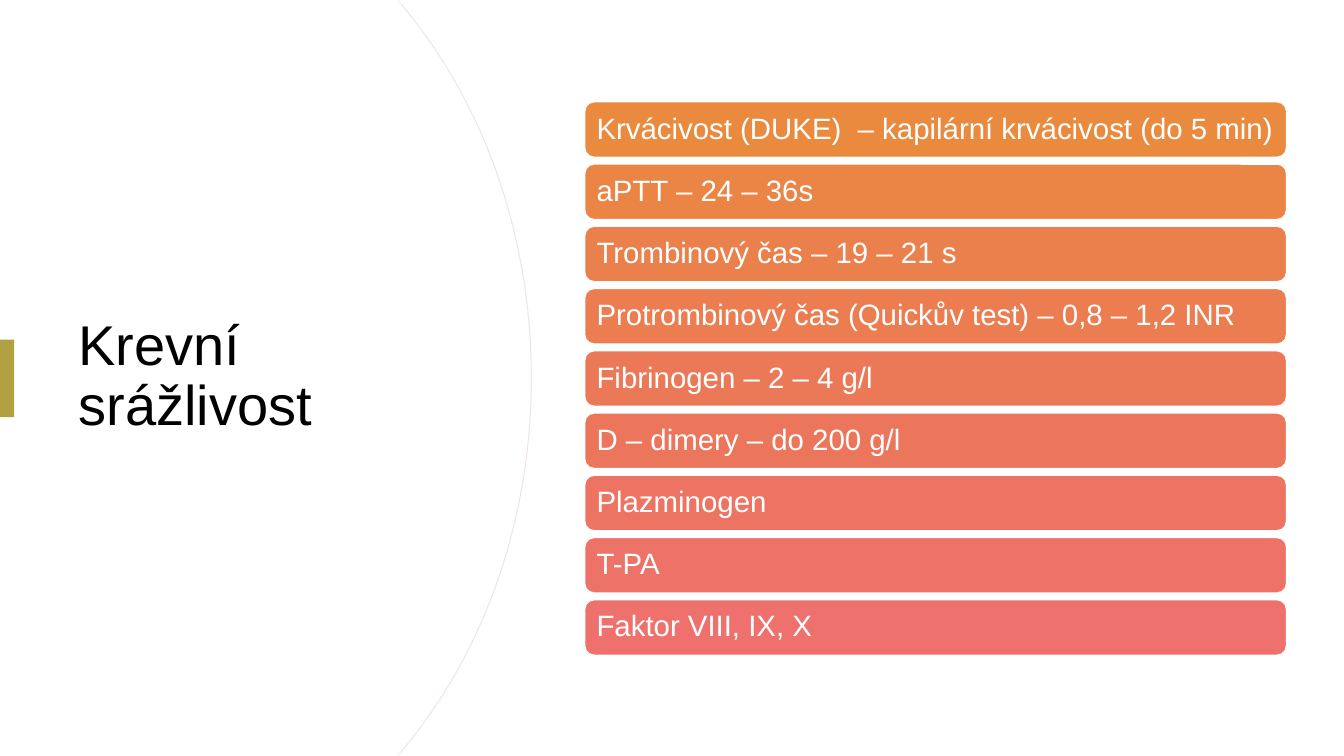
from lxml import etree
from pptx import Presentation
from pptx.dml.color import RGBColor
from pptx.enum.shapes import MSO_SHAPE
from pptx.enum.text import MSO_ANCHOR, PP_ALIGN
from pptx.oxml.ns import qn
from pptx.util import Inches, Pt

RECTANGLE, ROUNDED = MSO_SHAPE.RECTANGLE, MSO_SHAPE.ROUNDED_RECTANGLE
MIDDLE, LEFT = MSO_ANCHOR.MIDDLE, PP_ALIGN.LEFT

WIDTH, HEIGHT = 13.33, 7.5
COLORS = {"white": "FFFFFF", "black": "000000", "edge": "F0E5E5", "accent": "B1A141"}

# Each test with the colour of its bar
TESTS = [
    ("Krvácivost (DUKE)  – kapilární krvácivost (do 5 min)", "E98A3F"),
    ("aPTT – 24 – 36s", "EA8545"),
    ("Trombinový čas – 19 – 21 s", "EA804B"),
    ("Protrombinový čas (Quickův test) – 0,8 – 1,2 INR", "EB7D51"),
    ("Fibrinogen – 2 – 4 g/l", "EB7957"),
    ("D – dimery – do 200 g/l", "EC765C"),
    ("Plazminogen", "ED7462"),
    ("T-PA", "ED7268"),
    ("Faktor VIII, IX, X", "EE716E"),
]


def paint(shape, fill, line=None, weight=1):
    shape.shadow.inherit = False
    shape.fill.solid()
    shape.fill.fore_color.rgb = RGBColor.from_string(fill)
    if line:
        shape.line.color.rgb = RGBColor.from_string(line)
        shape.line.width = Pt(weight)
    else:
        shape.line.fill.background()


def write(box, text, size, color, margin):
    frame = box.text_frame
    layout = {"word_wrap": True, "vertical_anchor": MIDDLE,
              "margin_left": Inches(margin), "margin_right": Inches(margin),
              "margin_top": Inches(0.05), "margin_bottom": Inches(0.05)}
    for name, value in layout.items():
        setattr(frame, name, value)
    para = frame.paragraphs[0]
    para.alignment, para.line_spacing = LEFT, 0.9
    span = para.add_run()
    span.text = text
    span.font.name, span.font.size = "Arial", Pt(size)
    span.font.color.rgb = RGBColor.from_string(color)


deck = Presentation()
deck.slide_width, deck.slide_height = Inches(WIDTH), Inches(HEIGHT)
page = deck.slides.add_slide(deck.slide_layouts[6])

# Curved panel: an outlined shape under a slightly narrower plain one
for reach, edge in ((5.27, COLORS["edge"]), (5.26, None)):
    upper = [(3.94, 0), (reach - 1.26, 0.08), (reach - 0.48, 1.02), (reach, 2.32)]
    lower = [(x, HEIGHT - y) for x, y in reversed(upper)]
    points = upper + [(reach, HEIGHT / 2)] + lower + [(0, HEIGHT)]
    outline = page.shapes.build_freeform(0, 0)
    outline.add_line_segments([(Inches(x), Inches(y)) for x, y in points], close=True)
    panel = outline.convert_to_shape()
    paint(panel, COLORS["white"], edge, 0.75)

    # Turn each group of three inner points into one Bézier curve
    segments = list(panel.element.iter(qn("a:lnTo")))
    for group in (segments[2:5], segments[5:8]):
        curve = etree.Element(qn("a:cubicBezTo"))
        group[0].addprevious(curve)
        for segment in group:
            curve.append(segment[0])
            segment.getparent().remove(segment)

# Title and accent mark
title = page.shapes.add_textbox(Inches(0.68), Inches(1.27), Inches(3.94), Inches(4.95))
write(title, "Krevní srážlivost", 40, COLORS["black"], 0.1)
mark = page.shapes.add_shape(RECTANGLE, 0, Inches(3.37), Inches(0.14), Inches(0.77))
paint(mark, COLORS["accent"])

# Column of test bars
BAR_LEFT, BAR_WIDTH, BAR_HEIGHT = 5.8, 6.96, 0.55
FIRST_TOP, LAST_TOP = 1.01, 5.95
pitch = (LAST_TOP - FIRST_TOP) / (len(TESTS) - 1)
for row, (test, color) in enumerate(TESTS):
    bar = page.shapes.add_shape(ROUNDED, Inches(BAR_LEFT), Inches(FIRST_TOP + row * pitch),
                                Inches(BAR_WIDTH), Inches(BAR_HEIGHT))
    paint(bar, color, COLORS["white"])
    write(bar, test, 21, COLORS["white"], 0.09)

deck.save("out.pptx")
